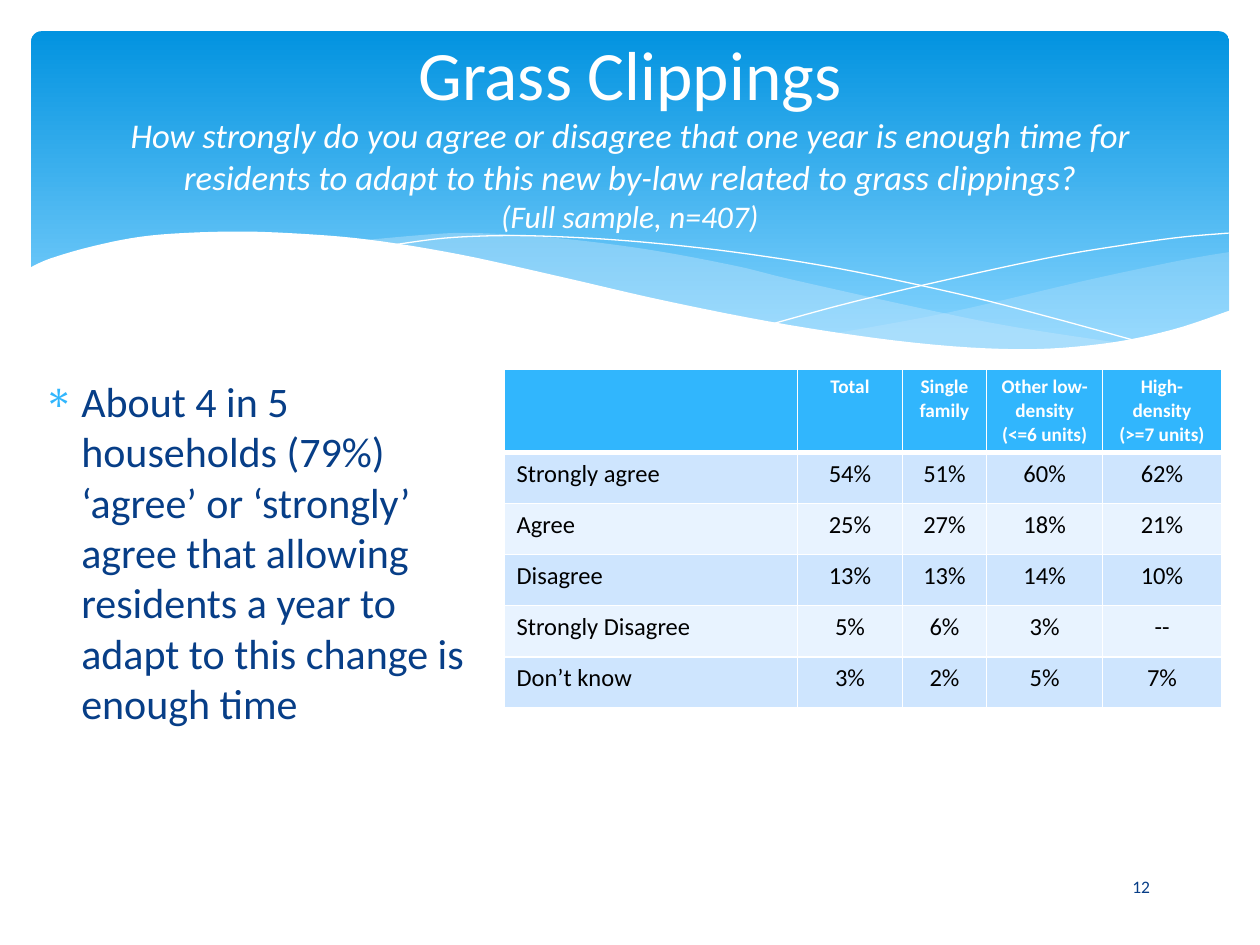
from lxml import etree
from pptx import Presentation
from pptx.dml.color import RGBColor
from pptx.enum.shapes import MSO_SHAPE
from pptx.enum.text import MSO_ANCHOR, PP_ALIGN
from pptx.oxml import parse_xml
from pptx.oxml.ns import nsdecls, qn
from pptx.util import Cm, Pt

ROUNDED = MSO_SHAPE.ROUNDED_RECTANGLE
TOP, MIDDLE = MSO_ANCHOR.TOP, MSO_ANCHOR.MIDDLE
LEFT, CENTER = PP_ALIGN.LEFT, PP_ALIGN.CENTER

WHITE, BLACK, NAVY = "FFFFFF", "000000", "073E87"
SKY, MIST = "31B6FD", "C6E7FC"
BANDS = ("CEE5FE", "E8F3FF")

RIGHT_SWELL_TOP = [(24.79, 5.08), (23.75, 5.26), (21.87, 5.66), (19.13, 6.3), (16.79, 6.73)]
RIGHT_SWELL_BOTTOM = [(16.79, 6.73), (18.26, 6.91), (19.84, 7.04), (21.21, 7.04),
                      (22.58, 6.91), (23.75, 6.65), (24.79, 6.27)]
LONG_SWELL_TOP = [(7.26, 4.85), (8.74, 4.72), (9.65, 4.7), (11.23, 4.8), (13.06, 5.03),
                  (14.83, 5.36), (15.98, 5.64), (18.82, 6.27), (20.5, 6.6), (22.68, 6.93)]
LONG_SWELL_BOTTOM = [(22.68, 6.93), (21.54, 7.04), (19.94, 7.06), (18.34, 6.96), (16.51, 6.71),
                     (14.38, 6.3), (11.4, 5.64), (9.73, 5.26), (8.69, 5.05), (7.26, 4.85)]
FALLING_CREST = [(7.85, 4.95), (8.97, 4.8), (10.19, 4.75), (11.43, 4.78), (12.95, 4.88),
                 (14.78, 5.08), (16.89, 5.41), (19.3, 5.92), (21.11, 6.38), (23.04, 6.91)]
RISING_CREST = [(15.57, 6.53), (17.07, 6.12), (19, 5.66), (21.23, 5.18), (22.73, 4.93),
                (23.83, 4.78), (24.77, 4.7)]
SHORELINE = [(24.82, 6.25), (23.62, 6.65), (22.23, 6.93), (20.55, 7.04), (18.44, 6.91),
             (15.9, 6.55), (13.44, 6.07), (11.35, 5.59), (9.27, 5.13), (7.42, 4.83),
             (5.84, 4.7), (4.5, 4.67), (3.02, 4.75), (1.93, 4.95), (1.02, 5.21), (0.58, 5.41)]

COLUMN_WIDTHS = (5.92, 2.11, 1.7, 2.34, 2.39)
HEADINGS = ("", "Total", "Single family", "Other low-density\n(<=6 units)",
            "High-density (>=7 units)")
ANSWERS = (
    ("Strongly agree", "54%", "51%", "60%", "62%"),
    ("Agree", "25%", "27%", "18%", "21%"),
    ("Disagree", "13%", "13%", "14%", "10%"),
    ("Strongly Disagree", "5%", "6%", "3%", "--"),
    ("Don’t know", "3%", "2%", "5%", "7%"),
)


def rgb(value):
    return RGBColor.from_string(value)


def smooth(knots, steps=6):
    padded = [knots[0], *knots, knots[-1]]
    points = [knots[0]]
    for a, b, c, d in zip(padded, padded[1:], padded[2:], padded[3:]):
        for step in range(1, steps + 1):
            t = step / steps
            points.append(tuple(
                q + t * (r - p) / 2 + t**2 * (p - 2.5 * q + 2 * r - s / 2)
                + t**3 * (3 * q - p - 3 * r + s) / 2
                for p, q, r, s in zip(a, b, c, d)))
    return points


def write(paragraph, text, size=14, color=BLACK, font="Calibri", bold=False, italic=False,
          align=LEFT):
    paragraph.alignment = align
    run = paragraph.add_run()
    run.text = text
    run.font.name, run.font.size = font, Pt(size)
    run.font.bold, run.font.italic = bold, italic
    run.font.color.rgb = rgb(color)


class Deck:
    def __init__(self):
        self.presentation = Presentation()
        self.presentation.slide_width = Cm(25.4)
        self.presentation.slide_height = Cm(19.05)
        self.slide = self.presentation.slides.add_slide(self.presentation.slide_layouts[6])

    def banner(self, left, top, width, height, colors):
        banner = self.slide.shapes.add_shape(ROUNDED, Cm(left), Cm(top), Cm(width), Cm(height))
        banner.shadow.inherit = False
        banner.adjustments[0] = 0.03
        banner.line.fill.background()
        banner.fill.gradient()
        banner.fill.gradient_angle = 270
        for stop, color, position in zip(banner.fill.gradient_stops, colors, (0, 0.9)):
            stop.color.rgb, stop.position = rgb(color), position

    def outline(self, points, closed):
        corners = [(Cm(x), Cm(y)) for x, y in points]
        builder = self.slide.shapes.build_freeform(*corners[0])
        builder.add_line_segments(corners[1:], close=closed)
        shape = builder.convert_to_shape()
        shape.shadow.inherit = False
        return shape

    def wave(self, points, color, opacity=100):
        wave = self.outline(points, True)
        wave.line.fill.background()
        wave.fill.solid()
        wave.fill.fore_color.rgb = rgb(color)
        if opacity < 100:
            tint = wave.fill._xPr.find(".//" + qn("a:srgbClr"))
            etree.SubElement(tint, qn("a:alpha"), val=str(opacity * 1000))

    def crest(self, knots):
        crest = self.outline(smooth(knots), False)
        crest.fill.background()
        crest.line.color.rgb = rgb(WHITE)
        crest.line.width = Pt(0)

    def text_box(self, left, top, width, height, anchor=TOP):
        frame = self.slide.shapes.add_textbox(
            Cm(left), Cm(top), Cm(width), Cm(height)).text_frame
        frame.word_wrap = True
        frame.vertical_anchor = anchor
        return frame.paragraphs[0]

    def bullet(self, paragraph, symbol, color, indent):
        properties = paragraph._p.get_or_add_pPr()
        properties.set("marL", str(Cm(indent)))
        properties.set("indent", str(-Cm(indent)))
        tint = etree.SubElement(properties, qn("a:buClr"))
        etree.SubElement(tint, qn("a:srgbClr"), val=color)
        etree.SubElement(properties, qn("a:buChar"), char=symbol)

    def cell(self, cell, text, fill, edges, **style):
        cell.fill.solid()
        cell.fill.fore_color.rgb = rgb(fill)
        for index, (side, width) in enumerate(zip("LRTB", edges)):
            cell._tc.get_or_add_tcPr().insert(index, parse_xml(
                f'<a:ln{side} {nsdecls("a")} w="{Pt(width)}"><a:solidFill>'
                f'<a:srgbClr val="{WHITE}"/></a:solidFill></a:ln{side}>'))
        for index, line in enumerate(text.split("\n")):
            frame = cell.text_frame
            write(frame.add_paragraph() if index else frame.paragraphs[0], line, **style)

    def table(self, left, top, header_height, row_height):
        height = header_height + row_height * len(ANSWERS)
        table = self.slide.shapes.add_table(
            len(ANSWERS) + 1, len(HEADINGS), Cm(left), Cm(top),
            Cm(sum(COLUMN_WIDTHS)), Cm(height)).table
        for column, width in zip(table.columns, COLUMN_WIDTHS):
            column.width = Cm(width)
        for index, row in enumerate(table.rows):
            row.height = Cm(row_height if index else header_height)
        for column, heading in enumerate(HEADINGS):
            self.cell(table.cell(0, column), heading, SKY, (1, 1, 1, 3),
                      size=11, color=WHITE, bold=True, align=CENTER)
        for row, answer in enumerate(ANSWERS, 1):
            edges = (1, 1, 3 if row == 1 else 1, 1)
            for column, value in enumerate(answer):
                self.cell(table.cell(row, column), value, BANDS[(row - 1) % 2], edges,
                          align=CENTER if column else LEFT)


def main():
    deck = Deck()
    deck.banner(0.63, 0.63, 24.15, 6.86, ("0293E0", "83D3FE"))
    deck.wave(smooth(RIGHT_SWELL_TOP) + smooth(RIGHT_SWELL_BOTTOM), MIST, 29)
    deck.wave(smooth(LONG_SWELL_TOP) + smooth(LONG_SWELL_BOTTOM), MIST, 40)
    deck.crest(FALLING_CREST)
    deck.crest(RISING_CREST)
    deck.wave(smooth(SHORELINE) + [(0.58, 8.36), (24.82, 8.36)], WHITE)

    title = deck.text_box(1.27, 0.94, 22.86, 3.48, MIDDLE)
    write(title, "Grass Clippings", size=39.6, color=WHITE, align=CENTER)
    title.add_line_break()
    write(title, "How strongly do you agree or disagree that one year is enough time for "
          "residents to adapt to this new by-law related to grass clippings?",
          size=19.8, color=WHITE, italic=True, align=CENTER)
    title.add_line_break()
    write(title, "(Full sample, n=407)", size=18, color=WHITE, italic=True, align=CENTER)

    page_number = deck.text_box(21.39, 17.37, 3.23, 1.02, MIDDLE)
    write(page_number, "12", size=10, color=NAVY, align=CENTER)

    finding = deck.text_box(0.63, 7.44, 9.09, 9.58)
    deck.bullet(finding, "∗", SKY, 0.76)
    write(finding, "About 4 in 5 households (79%) ‘agree’ or ‘strongly’ agree that allowing "
          "residents a year to adapt to this change is enough time", size=24, color=NAVY)

    deck.table(10.16, 7.44, 1.68, 1.03)
    deck.presentation.save("out.pptx")


if __name__ == "__main__":
    main()
